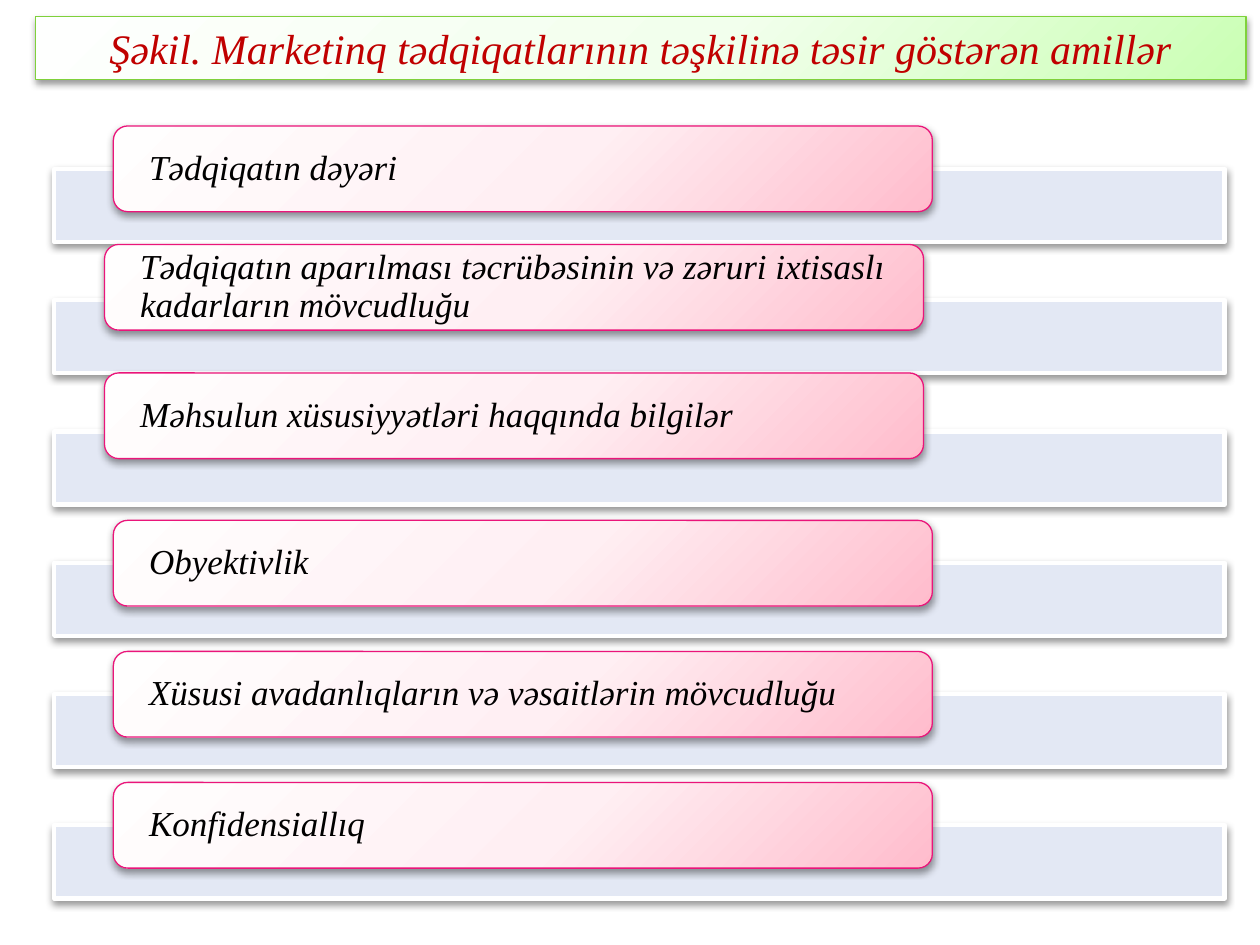
from pptx import Presentation
from pptx.dml.color import RGBColor
from pptx.enum.shapes import MSO_SHAPE as Shape
from pptx.enum.text import MSO_ANCHOR as Anchor, PP_ALIGN as Align
from pptx.oxml import parse_xml
from pptx.oxml.ns import nsdecls, qn
from pptx.util import Inches, Pt

BLACK = RGBColor(0x00, 0x00, 0x00)
WHITE = RGBColor(0xFF, 0xFF, 0xFF)
DARK_RED = RGBColor(0xC0, 0x00, 0x00)
PALE_BLUE = RGBColor(0xE3, 0xE8, 0xF4)
PINK = RGBColor(0xEA, 0x15, 0x7A)
GREEN = RGBColor(0x7F, 0xD1, 0x3B)
PINK_GLOW = [(0, RGBColor(0xFF, 0xFE, 0xFE)), (55, RGBColor(0xFF, 0xEF, 0xF3)),
             (100, RGBColor(0xFF, 0xBC, 0xCC))]
GREEN_GLOW = [(0, RGBColor(0xFE, 0xFF, 0xFE)), (55, RGBColor(0xF2, 0xFF, 0xED)),
              (100, RGBColor(0xCA, 0xFF, 0xB4))]

HEADING = "Şəkil. Marketinq tədqiqatlarının təşkilinə təsir göstərən amillər"
# Factor, left and top of its card
FACTORS = [
    ("Tədqiqatın dəyəri", 0.9, 1),
    ("Tədqiqatın aparılması təcrübəsinin və zəruri ixtisaslı kadarların mövcudluğu",
     0.83, 1.94),
    ("Məhsulun xüsusiyyətləri haqqında bilgilər", 0.83, 2.96),
    ("Obyektivlik", 0.9, 4.13),
    ("Xüsusi avadanlıqların və vəsaitlərin mövcudluğu", 0.9, 5.17),
    ("Konfidensiallıq", 0.9, 6.21),
]
FIRST_BAR_TOP = 1.34
BAR_STEP = 1.042


def write(shape, text, *, size, color, align=Align.LEFT, spacing=1.0, inset=0.1, padding=0.05):
    frame = shape.text_frame
    frame.word_wrap = True
    frame.vertical_anchor = Anchor.MIDDLE
    frame.margin_left = frame.margin_right = Inches(inset)
    frame.margin_top = frame.margin_bottom = Inches(padding)
    paragraph = frame.paragraphs[0]
    paragraph.alignment = align
    paragraph.line_spacing = spacing
    run = paragraph.add_run()
    run.text = text
    run.font.name = "Times New Roman"
    run.font.size = Pt(size)
    run.font.italic = True
    run.font.color.rgb = color


def fill_radial(shape, stops):
    """Fill with a circular gradient centred beyond the top left corner."""
    shape.fill.background()
    properties = shape.element.spPr
    marks = "".join(f'<a:gs pos="{position * 1000}"><a:srgbClr val="{color}"/></a:gs>'
                    for position, color in stops)
    gradient = parse_xml(
        f'<a:gradFill {nsdecls("a")} rotWithShape="1"><a:gsLst>{marks}</a:gsLst>'
        '<a:path path="circle"><a:fillToRect l="-40000" t="-90000" r="140000" b="190000"/>'
        '</a:path></a:gradFill>')
    properties.replace(properties.find(qn("a:noFill")), gradient)


def drop_shadow(shape):
    shape.shadow.inherit = False
    shape.element.spPr.find(qn("a:effectLst")).append(parse_xml(
        f'<a:outerShdw {nsdecls("a")} blurRad="{Pt(4.1)}" dist="{Pt(2)}" dir="5400000" '
        'rotWithShape="0"><a:srgbClr val="000000"><a:alpha val="40000"/></a:srgbClr>'
        '</a:outerShdw>'))


class FactorSlide:
    def __init__(self, slide):
        self.slide = slide

    def panel(self, kind, left, top, width, height, line, weight):
        panel = self.slide.shapes.add_shape(
            kind, Inches(left), Inches(top), Inches(width), Inches(height))
        panel.line.color.rgb = line
        panel.line.width = Pt(weight)
        drop_shadow(panel)
        return panel

    def bar(self, top):
        bar = self.panel(Shape.RECTANGLE, 0.43, top, 9.29, 0.58, WHITE, 2.5)
        bar.fill.solid()
        bar.fill.fore_color.rgb = PALE_BLUE

    def card(self, factor, left, top):
        card = self.panel(Shape.ROUNDED_RECTANGLE, left, top, 6.5, 0.68, PINK, 0.75)
        fill_radial(card, PINK_GLOW)
        write(card, factor, size=20, color=BLACK, spacing=0.9, inset=0.25, padding=0)

    def heading(self, text):
        heading = self.panel(Shape.RECTANGLE, 0.28, 0.13, 9.61, 0.5, GREEN, 0.75)
        fill_radial(heading, GREEN_GLOW)
        write(heading, text, size=24, color=DARK_RED, align=Align.CENTER)


def main():
    deck = Presentation()
    deck.slide_width, deck.slide_height = Inches(10), Inches(7.5)
    page = FactorSlide(deck.slides.add_slide(deck.slide_layouts[6]))
    for index, (factor, left, top) in enumerate(FACTORS):
        page.bar(FIRST_BAR_TOP + index * BAR_STEP)
        page.card(factor, left, top)
    page.heading(HEADING)
    deck.save("out.pptx")


if __name__ == "__main__":
    main()
